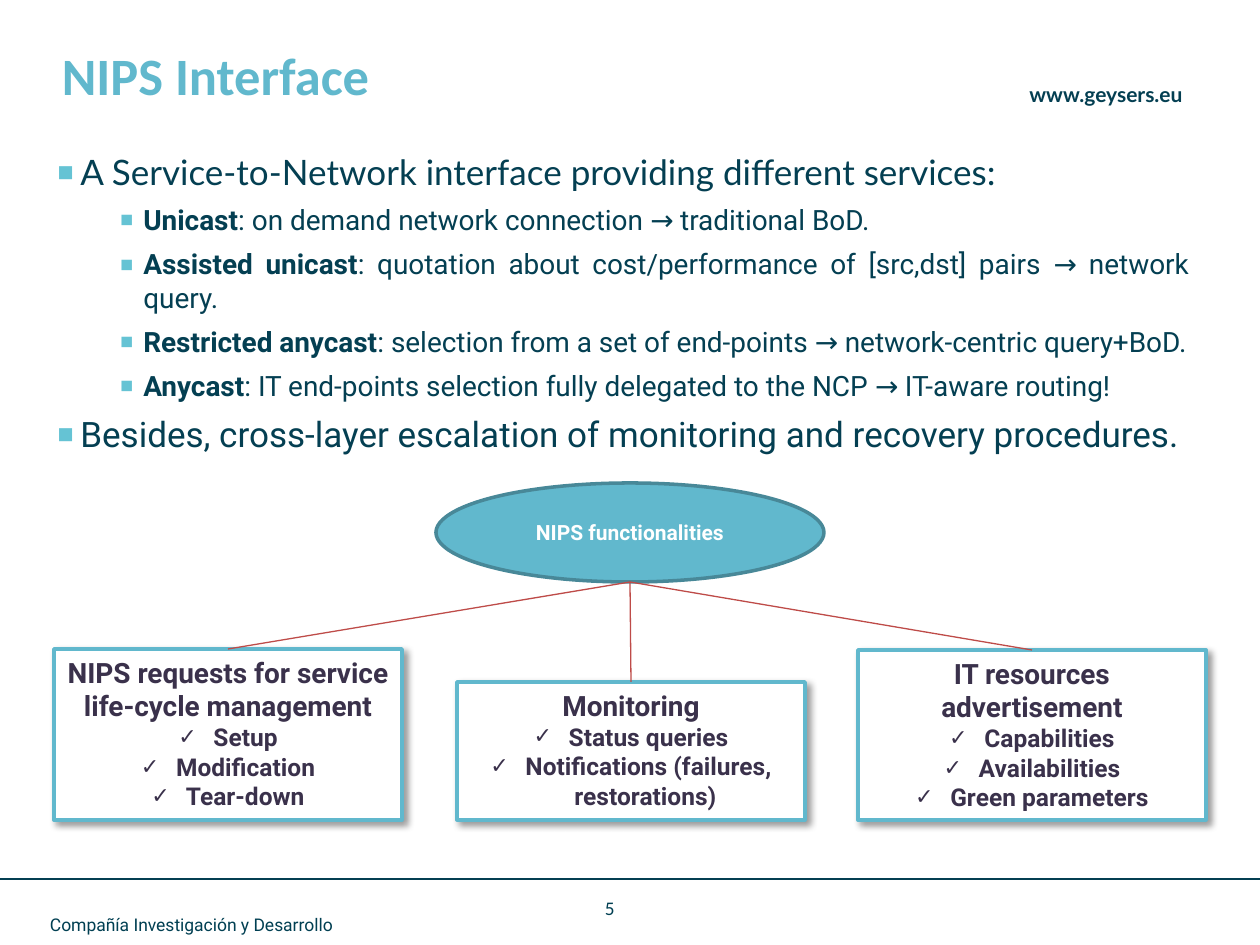
from lxml import etree
from pptx import Presentation, util as u
from pptx.dml.color import RGBColor
from pptx.enum import shapes, text
from pptx.oxml.ns import qn

PX = 914400 / 126
TEAL = RGBColor(0x61, 0xB8, 0xCD)
DARK_TEAL = RGBColor(0x48, 0x88, 0x98)
BULLET_TEAL = RGBColor(0x65, 0xC3, 0xD4)
NAVY = RGBColor(0x04, 0x3F, 0x52)
FOOTER_NAVY = RGBColor(0x00, 0x3F, 0x52)
PLUM = RGBColor(0x3A, 0x31, 0x4B)
RED = RGBColor(0xBE, 0x4B, 0x48)
WHITE = RGBColor(0xFF, 0xFF, 0xFF)
CENTER = text.PP_ALIGN.CENTER


def px(*lengths):
    return [u.Emu(round(length * PX)) for length in lengths]


def add_bullet(para, char, percent, margin, hanging, color):
    props = para._p.get_or_add_pPr()
    props.set("marL", str(px(margin)[0]))
    props.set("indent", str(px(-hanging)[0]))
    fill = etree.SubElement(props, qn("a:buClr"))
    etree.SubElement(fill, qn("a:srgbClr"), val=str(color))
    etree.SubElement(props, qn("a:buSzPct"), val=str(percent * 1000))
    etree.SubElement(props, qn("a:buFont"), typeface="Arial")
    etree.SubElement(props, qn("a:buChar"), char=char)


deck = Presentation()
deck.slide_width, deck.slide_height = px(1260, 945)
page = deck.slides.add_slide(deck.slide_layouts[6])

# Title, web address, footer and page number
labels = [
    ("NIPS Interface", (57, 38, 1095, 75), 5, "Calibri", 30, True, TEAL),
    ("www.geysers.eu", (1016, 76, 180, 38), 6, "Lato", 12, True, NAVY),
    ("Compañía Investigación y Desarrollo", (40, 906, 630, 39), 10,
     "Roboto", 10, False, FOOTER_NAVY),
    ("5", (605, 896, 60, 24), 0, "Calibri", 11, False, FOOTER_NAVY),
]
label_boxes = []
for words, place, inset, font, size, bold, color in labels:
    box = page.shapes.add_textbox(*px(*place))
    frame = box.text_frame
    frame.word_wrap = True
    frame.margin_left, frame.margin_top, frame.margin_right, frame.margin_bottom = px(*[inset] * 4)
    frame.text = words
    span = frame.paragraphs[0].runs[0]
    span.font.name, span.font.size, span.font.bold = font, u.Pt(size), bold
    span.font.color.rgb = color
    label_boxes.append(frame)
title, address, footer, number = label_boxes
address.word_wrap = False
address.paragraphs[0].alignment = CENTER
footer.vertical_anchor = text.MSO_ANCHOR.BOTTOM
footer.paragraphs[0].line_spacing = 0.9

# Body: (bold term, rest, level, font, size)
points = [
    ("", "A Service-to-Network interface providing different services:", 0, "Lato", 20),
    ("Unicast", ": on demand network connection → traditional BoD.", 1, "Roboto", 16),
    ("Assisted unicast",
     ": quotation about cost/performance of [src,dst] pairs → network query.", 1, "Roboto", 16),
    ("Restricted anycast",
     ": selection from a set of end-points → network-centric query+BoD.", 1, "Roboto", 16),
    ("Anycast",
     ": IT end-points selection fully delegated to the NCP → IT-aware routing!", 1, "Roboto", 16),
    ("", "Besides, cross-layer escalation of monitoring and recovery procedures.", 0, "Roboto", 20),
]
body = page.shapes.add_textbox(*px(44, 144, 1158, 101)).text_frame
body.word_wrap = True
for i, (term, rest, level, font, size) in enumerate(points):
    para = body.add_paragraph() if i else body.paragraphs[0]
    para.level = level
    para.alignment = text.PP_ALIGN.JUSTIFY
    para.space_after = u.Pt(6)
    add_bullet(para, "▪", 150, 24 + 63 * level, 24, BULLET_TEAL)
    for words, bold in ((term, True), (rest, False)):
        if words:
            span = para.add_run()
            span.text = words
            span.font.name, span.font.size, span.font.bold = font, u.Pt(size), bold
            span.font.color.rgb = NAVY

# Functionality tree
root = page.shapes.add_shape(shapes.MSO_SHAPE.OVAL, *px(436, 483, 388, 99))
root.shadow.inherit = False
root.fill.solid()
root.fill.fore_color.rgb = TEAL
root.line.color.rgb = DARK_TEAL
root.line.width = u.Pt(2)
root.text_frame.text = "NIPS functionalities"
root.text_frame.vertical_anchor = text.MSO_ANCHOR.MIDDLE
para = root.text_frame.paragraphs[0]
para.alignment = CENTER
span = para.runs[0]
span.font.name, span.font.size, span.font.bold = "Roboto", u.Pt(12), True
span.font.color.rgb = WHITE

branches = [
    (858, 650, 170, "IT resources advertisement",
     ["Capabilities", "Availabilities", "Green parameters"]),
    (54, 649, 171, "NIPS requests for service life-cycle management",
     ["Setup", "Modification", "Tear-down"]),
    (457, 682, 138, "Monitoring",
     ["Status queries", "Notifications (failures, restorations)"]),
]
lines = []
for left, top, height, heading, items in branches:
    box = page.shapes.add_shape(shapes.MSO_SHAPE.RECTANGLE, *px(left, top, 348, height))
    box.fill.solid()
    box.fill.fore_color.rgb = WHITE
    box.line.color.rgb = TEAL
    box.line.width = u.Pt(2)
    box.shadow.inherit = False
    effects = box._element.spPr.find(qn("a:effectLst"))
    shadow = etree.SubElement(effects, qn("a:outerShdw"), blurRad="50800", dist="38100",
                              dir="2700000", algn="tl", rotWithShape="0")
    shade = etree.SubElement(shadow, qn("a:srgbClr"), val="000000")
    etree.SubElement(shade, qn("a:alpha"), val="40000")

    frame = box.text_frame
    frame.word_wrap = True
    frame.vertical_anchor = text.MSO_ANCHOR.TOP
    frame.text = "\n".join([heading] + [f" {item}" for item in items])
    for i, para in enumerate(frame.paragraphs):
        para.alignment = CENTER
        if i:
            add_bullet(para, "✓", 90, 29, 29, PLUM)
        span = para.runs[0]
        span.font.name, span.font.size, span.font.bold = "Roboto", u.Pt(14 if i else 16), True
        span.font.color.rgb = PLUM

    line = page.shapes.add_connector(shapes.MSO_CONNECTOR.STRAIGHT,
                                     *px(630, 582, left + 174, top))
    line.end_connect(box, 0)
    lines.append((line, RED))

footer_rule = page.shapes.add_connector(shapes.MSO_CONNECTOR.STRAIGHT, *px(0, 879, 1260, 879))
lines.append((footer_rule, NAVY))
for line, color in lines:
    line.line.color.rgb = color
    line.line.width = u.Pt(0.75)
    etree.SubElement(line._element.spPr, qn("a:effectLst"))

deck.save("out.pptx")
